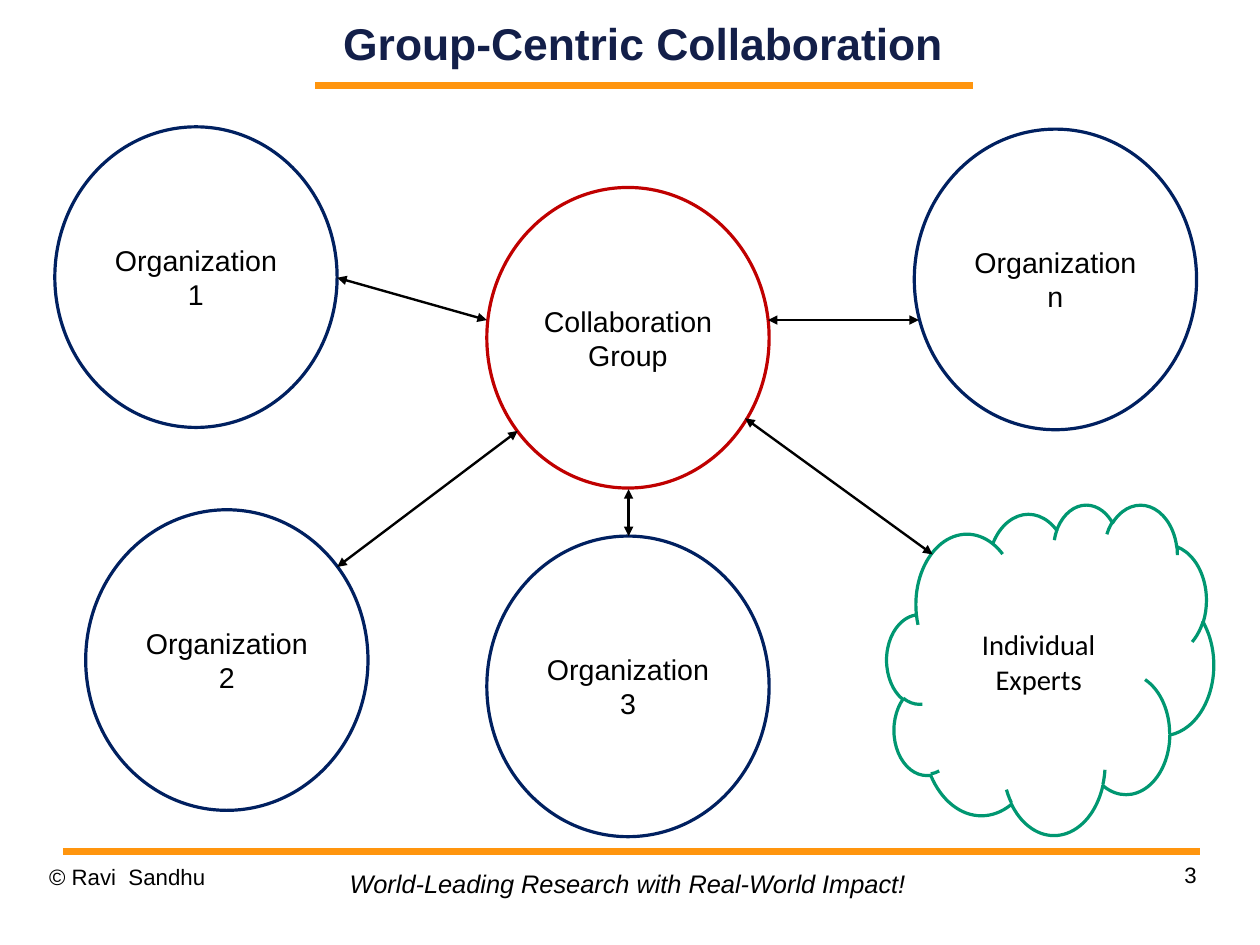
import lxml.etree
import pptx
import pptx.dml.color
import pptx.enum.shapes
import pptx.enum.text
import pptx.oxml.ns
import pptx.util

PX = 9144  # EMU per px, 100 px to the inch
SLIDE_WIDTH, SLIDE_HEIGHT = 10080625, 7559675  # EMU, 28 by 21 cm
SHAPE = pptx.enum.shapes.MSO_SHAPE
ALIGN = pptx.enum.text.PP_ALIGN
ANCHOR = pptx.enum.text.MSO_ANCHOR

BLACK, NAVY, TITLE_BLUE = "000000", "002060", "131F49"
RED, GREEN, ORANGE = "C00000", "009771", "FF950E"
CIRCLE_WIDTH, CIRCLE_HEIGHT = 247, 263


def color(hex_code):
    return pptx.dml.color.RGBColor.from_string(hex_code)


def emu(*lengths):
    return [pptx.util.Emu(length * PX) for length in lengths]


class Board:
    """The current slide and the style of its elements."""

    def __init__(self, slide, font="Arial"):
        self.slide = slide
        self.font = font

    def style(self, paragraph, size, hex_code=BLACK, font=None, bold=None, italic=None):
        paragraph.font.name = font or self.font
        paragraph.font.size = pptx.util.Pt(size)
        paragraph.font.color.rgb = color(hex_code)
        paragraph.font.bold = bold
        paragraph.font.italic = italic

    def text(self, words, box, size, align=ALIGN.LEFT, anchor=ANCHOR.TOP,
             spacing=None, fitted=False, **look):
        frame = self.slide.shapes.add_textbox(*emu(*box)).text_frame
        frame.vertical_anchor = anchor
        frame.word_wrap = not fitted
        if fitted:
            frame.auto_size = pptx.enum.text.MSO_AUTO_SIZE.SHAPE_TO_FIT_TEXT
        else:
            frame.margin_left = frame.margin_right = 0
            frame.margin_top = frame.margin_bottom = 0
        paragraph = frame.paragraphs[0]
        paragraph.text = words
        paragraph.alignment = align
        paragraph.line_spacing = spacing
        self.style(paragraph, size, **look)

    def node(self, words, box, outline, preset=SHAPE.OVAL, font=None):
        node = self.slide.shapes.add_shape(preset, *emu(*box))
        node.shadow.inherit = False
        node.fill.background()
        node.line.color.rgb = color(outline)
        node.line.width = pptx.util.Pt(2)
        node.text_frame.word_wrap = True
        node.text_frame.vertical_anchor = ANCHOR.MIDDLE
        paragraph = node.text_frame.paragraphs[0]
        paragraph.text = words
        paragraph.alignment = ALIGN.CENTER
        self.style(paragraph, 18, font=font)

    def line(self, ends, hex_code, width, arrows=False):
        line = self.slide.shapes.add_connector(
            pptx.enum.shapes.MSO_CONNECTOR.STRAIGHT, *emu(*ends))
        line.line.color.rgb = color(hex_code)
        line.line.width = pptx.util.Pt(width)
        if arrows:
            outline = line.line._get_or_add_ln()
            for end in ("a:headEnd", "a:tailEnd"):
                lxml.etree.SubElement(outline, pptx.oxml.ns.qn(end), type="triangle")
        lxml.etree.SubElement(line._element.spPr, pptx.oxml.ns.qn("a:effectLst"))


def main():
    deck = pptx.Presentation()
    deck.slide_width = pptx.util.Emu(SLIDE_WIDTH)
    deck.slide_height = pptx.util.Emu(SLIDE_HEIGHT)
    board = Board(deck.slides.add_slide(deck.slide_layouts[6]))

    # Rules under the title and above the footer
    for ends in ((276, 75, 851, 75), (55, 745, 1050, 745)):
        board.line(ends, ORANGE, 4.31)

    # Title and footer
    board.text("3", (790, 753, 257, 57), 14, ALIGN.RIGHT, spacing=1.01)
    board.text("Group-Centric Collaboration", (241, 0, 643, 75), 28, ALIGN.CENTER,
               ANCHOR.MIDDLE, hex_code=TITLE_BLUE, bold=True)
    board.text("© Ravi  Sandhu", (43, 755, 257, 57), 14, spacing=1.01)
    board.text("World-Leading Research with Real-World Impact!",
               (296, 755, 508, 37), 16, fitted=True, italic=True)

    # Collaboration group, individual experts and organizations
    board.node("Collaboration Group", (426, 164, CIRCLE_WIDTH, CIRCLE_HEIGHT), RED)
    board.node("Individual Experts", (776, 441, 286, 289), GREEN, SHAPE.CLOUD, "Calibri")
    organizations = (("2", 75, 446), ("1", 48, 111), ("n", 800, 113), ("3", 426, 469))
    for number, left, top in organizations:
        board.node(f"Organization {number}",
                   (left, top, CIRCLE_WIDTH, CIRCLE_HEIGHT), NAVY)

    # Two-way links with the group
    links = (
        (295, 243, 426, 280),
        (295, 496, 453, 377),
        (672, 280, 804, 280),
        (652, 366, 816, 485),
        (550, 469, 550, 428),
    )
    for ends in links:
        board.line(ends, BLACK, 1.5, arrows=True)

    deck.save("out.pptx")


if __name__ == "__main__":
    main()
